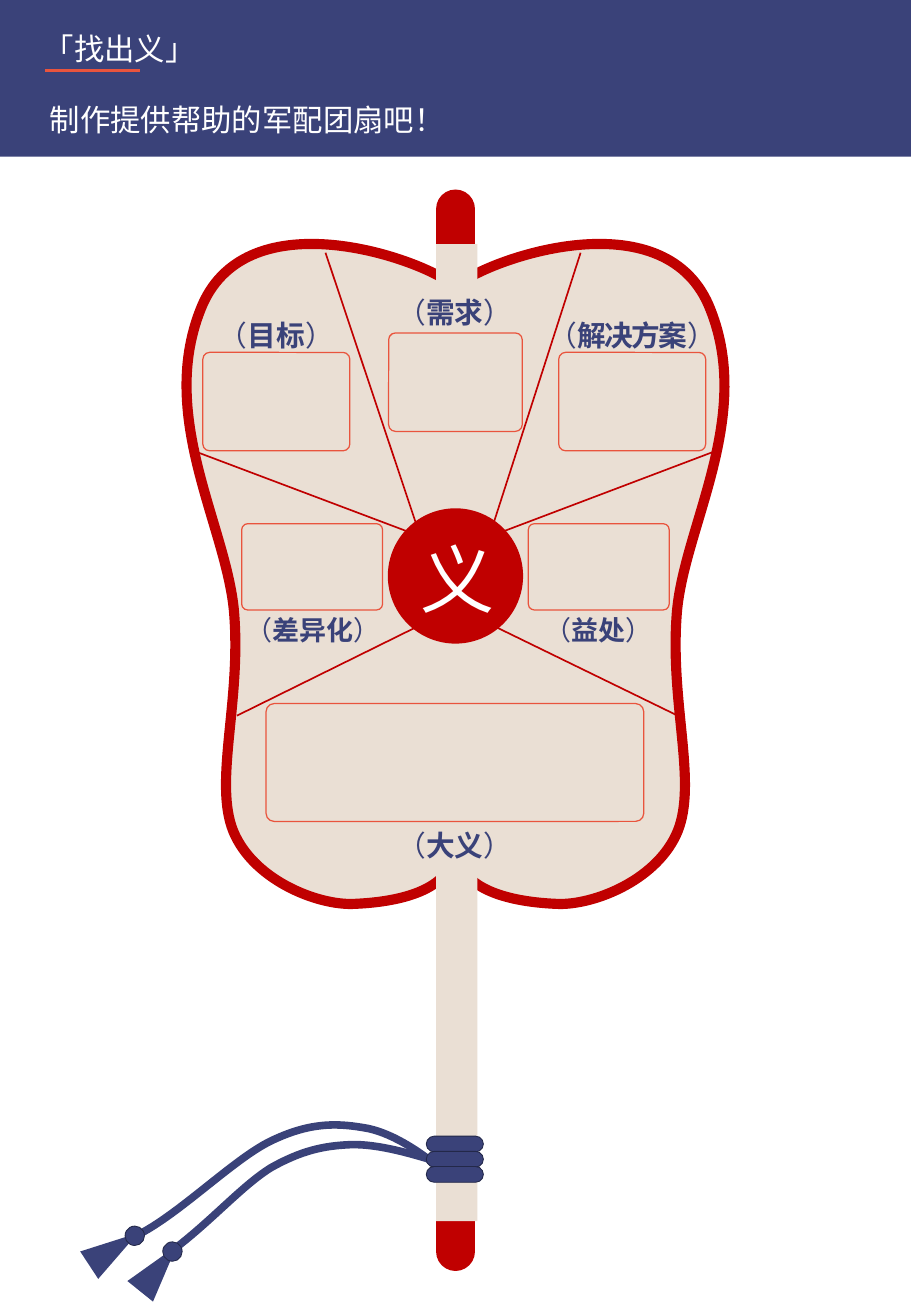
"""Build the war-fan worksheet slide."""
from dataclasses import dataclass

from lxml import etree
from pptx import Presentation
from pptx import util as u
from pptx.dml import color, fill, line
from pptx.enum import shapes, text
from pptx.oxml import ns
from pptx.shapes import autoshape, base
from pptx.slide import Slide
from pptx.text import text as txt

Point = tuple[float, float]
Box = tuple[float, float, float, float]

NAVY, DARK_NAVY, RED, ORANGE = "3A4279", "232849", "C00000", "E9543D"
PAPER, WHITE = "EADFD4", "FFFFFF"
FONT = "Noto Sans CJK SC"
PAGE_WIDTH, PAGE_HEIGHT = 7.5, 10.83
Kind = shapes.MSO_SHAPE


@dataclass(frozen=True)
class Part:
    kind: Kind
    box: Box
    fill: str | None = None
    line: str | None = None
    width: float = 0.5
    radius: float | None = None
    rotation: float = 0


@dataclass(frozen=True)
class Stroke:
    start: Point
    end: Point
    color: str = RED
    width: float = 1


@dataclass(frozen=True)
class Curve:
    box: Box
    knots: list[Point]
    fill: str | None = None
    line: str = NAVY
    width: float = 4.5


@dataclass(frozen=True)
class Label:
    word: str
    box: Box
    size: float = 17
    spacing: float = 1
    side_inset: float = 0.1
    tracking: int = 0


LEFT_BLADE = Curve((1.54, 2.01, 2.21, 5.43), [
    (3.71, 2.33), (3.39, 2.1), (2, 1.64), (1.65, 2.55),
    (1.29, 3.46), (1.89, 4.37), (1.93, 5.08), (1.98, 5.8), (1.76, 6.44), (1.92, 6.84),
    (2.08, 7.23), (2.58, 7.44), (2.89, 7.44), (3.21, 7.43), (3.66, 7.36), (3.73, 7.06),
    (3.8, 6.75), (3.68, 3.09), (3.71, 2.33)], PAPER, RED, 6)
RIGHT_BLADE = Curve((3.75, 2.01, 2.21, 5.43),
                    [(PAGE_WIDTH - x, y) for x, y in LEFT_BLADE.knots], PAPER, RED, 6)
CORDS = [
    Curve((1.12, 9.26, 2.47, 0.92), [
        (3.59, 9.59), (3.46, 9.48), (3.21, 9.31), (2.99, 9.28), (2.76, 9.24),
        (2.54, 9.24), (2.23, 9.39), (1.92, 9.54), (1.47, 10), (1.12, 10.17)]),
    Curve((1.42, 9.42, 2.15, 0.88), [
        (3.57, 9.55), (3.4, 9.5), (3.11, 9.41), (2.88, 9.42), (2.66, 9.43),
        (2.48, 9.47), (2.23, 9.61), (1.99, 9.76), (1.75, 10.04), (1.42, 10.29)]),
]
TASSELS = [Part(Kind.ISOSCELES_TRIANGLE, (x, y, 0.27, 0.48), NAVY, rotation=angle)
           for x, y, angle in [(0.8, 10.04, 56.6), (1.17, 10.2, 38.8)]]
HANDLE = [Part(Kind.ROUNDED_RECTANGLE, (3.59, 1.56, 0.32, 8.9), RED, radius=0.5),
          Part(Kind.RECTANGLE, (3.59, 2.01, 0.34, 8.04), PAPER)]
SPOKES = [Stroke(start, end) for start, end in [
    ((3.75, 5.28), (2.68, 2.08)), ((3.75, 5.28), (4.78, 2.08)),
    ((1.62, 3.72), (4.3, 4.73)), ((1.95, 5.89), (4.3, 4.73)),
    ((3.2, 4.73), (5.87, 3.72)), ((3.2, 4.73), (5.56, 5.88))]]
LABELS = [
    Label("目标", (1.42, 2.57, 1.71, 0.39)),
    Label("需求", (2.95, 2.38, 1.59, 0.39)),
    Label("解决方案", (4.32, 2.57, 1.77, 0.39), side_inset=0, tracking=-90),
    Label("差异化", (1.72, 5.03, 1.71, 0.34), 16, 0.9),
    Label("益处", (4.02, 5.03, 1.81, 0.34), 16, 0.9),
    Label("大义", (2.19, 6.76, 3.11, 0.39)),
]
HUB = Part(Kind.OVAL, (3.2, 4.19, 1.1, 1.1), RED, RED, 1)
BANNER = Part(Kind.RECTANGLE, (0, 0, PAGE_WIDTH, 1.29), NAVY)
TITLE_RULE = Stroke((0.37, 0.58), (1.15, 0.58), ORANGE, 2)
WRAPS = [Part(Kind.ROUNDED_RECTANGLE, (3.51, 9.35 + 0.125 * row, 0.47, 0.13),
              NAVY, DARK_NAVY, radius=0.5) for row in range(3)]
BEADS = [Part(Kind.OVAL, (x, y, 0.16, 0.16), NAVY, DARK_NAVY)
         for x, y in [(1.03, 10.09), (1.34, 10.22)]]
ANSWERS = [Part(Kind.ROUNDED_RECTANGLE, box, None, ORANGE, 0.75, 0.069) for box in [
    (1.67, 2.9, 1.21, 0.81), (4.6, 2.9, 1.21, 0.81), (3.2, 2.74, 1.1, 0.81),
    (1.99, 4.31, 1.16, 0.71), (4.35, 4.31, 1.16, 0.71), (2.19, 5.79, 3.11, 0.97)]]


def inches(values: tuple[float, ...]) -> list[u.Length]:
    return [u.Inches(value) for value in values]


def place(shape: base.BaseShape, box: Box) -> None:
    shape.left, shape.top, shape.width, shape.height = inches(box)


def paint(target: fill.FillFormat, hex_color: str | None) -> None:
    if hex_color is None:
        target.background()
    else:
        target.solid()
        target.fore_color.rgb = color.RGBColor.from_string(hex_color)


def outline(target: line.LineFormat, hex_color: str | None, width: float) -> None:
    paint(target.fill, hex_color)
    if hex_color:
        target.width = u.Pt(width)


def draw_part(slide: Slide, part: Part) -> autoshape.Shape:
    shape = slide.shapes.add_shape(part.kind, *inches(part.box))
    shape.shadow.inherit = False
    shape.rotation = part.rotation
    if part.radius is not None:
        shape.adjustments[0] = part.radius
    paint(shape.fill, part.fill)
    outline(shape.line, part.line, part.width)
    return shape


def draw_stroke(slide: Slide, stroke: Stroke) -> None:
    connector = slide.shapes.add_connector(
        shapes.MSO_CONNECTOR.STRAIGHT, *inches(stroke.start + stroke.end))
    etree.SubElement(connector.element.spPr, ns.qn("a:effectLst"))
    outline(connector.line, stroke.color, stroke.width)


def draw_curve(slide: Slide, curve: Curve) -> None:
    start, *anchors = [inches(knot) for knot in curve.knots[::3]]
    builder = slide.shapes.build_freeform(*start)
    builder.add_line_segments(anchors, close=False)
    shape = builder.convert_to_shape()
    place(shape, curve.box)
    outline_path = next(shape.element.iter(ns.qn("a:path")))
    outline_path.clear()
    outline_path.set("w", str(shape.width))
    outline_path.set("h", str(shape.height))
    for index, knot in enumerate(curve.knots):
        if index % 3 == 1 or index == 0:
            command = "a:cubicBezTo" if index else "a:moveTo"
            segment = etree.SubElement(outline_path, ns.qn(command))
        x, y = inches(knot)
        etree.SubElement(segment, ns.qn("a:pt"), x=str(x - shape.left), y=str(y - shape.top))
    shape.shadow.inherit = False
    paint(shape.fill, curve.fill)
    outline(shape.line, curve.line, curve.width)


def format_run(run: txt._Run, size: float, hex_color: str, bold: bool = False) -> None:
    run.font.size, run.font.bold, run.font.name = u.Pt(size), bold, FONT
    paint(run.font.fill, hex_color)
    etree.SubElement(run.font._element, ns.qn("a:ea"), typeface=FONT)


def set_frame(frame: txt.TextFrame, insets: Box, wrap: bool) -> None:
    frame.margin_left, frame.margin_top, frame.margin_right, frame.margin_bottom = inches(insets)
    frame.word_wrap = wrap
    frame.vertical_anchor = text.MSO_ANCHOR.TOP
    frame.auto_size = text.MSO_AUTO_SIZE.SHAPE_TO_FIT_TEXT


def draw_label(slide: Slide, label: Label) -> None:
    frame = slide.shapes.add_textbox(*inches(label.box)).text_frame
    set_frame(frame, (label.side_inset, 0.05, label.side_inset, 0.05), True)
    paragraph = frame.paragraphs[0]
    paragraph.alignment = text.PP_ALIGN.CENTER
    paragraph.line_spacing = label.spacing
    for piece in ("（", label.word, "）"):
        run = paragraph.add_run()
        run.text = piece
        format_run(run, label.size, NAVY, piece == label.word)
        if label.tracking:
            run.font._element.set("spc", str(label.tracking))


def write_heading(heading: base.BaseShape, words: str, box: Box) -> None:
    place(heading, box)
    heading.text_frame.text = words
    set_frame(heading.text_frame, (0.02,) * 4, False)
    paragraph = heading.text_frame.paragraphs[0]
    paragraph.alignment = text.PP_ALIGN.LEFT
    paragraph.line_spacing = 1.5
    format_run(paragraph.runs[0], 18, WHITE)


def draw_hub(slide: Slide) -> None:
    frame = draw_part(slide, HUB).text_frame
    frame.text = "义"
    frame.margin_top = u.Inches(0.08)
    frame.vertical_anchor = text.MSO_ANCHOR.MIDDLE
    frame.paragraphs[0].alignment = text.PP_ALIGN.CENTER
    format_run(frame.paragraphs[0].runs[0], 44, WHITE)


def main() -> None:
    deck = Presentation()
    deck.slide_width, deck.slide_height = inches((PAGE_WIDTH, PAGE_HEIGHT))
    slide = deck.slides.add_slide(deck.slide_layouts[5])
    for tassel in TASSELS:
        draw_part(slide, tassel)
    for curve in CORDS + [LEFT_BLADE, RIGHT_BLADE]:
        draw_curve(slide, curve)
    for part in HANDLE:
        draw_part(slide, part)
    for spoke in SPOKES:
        draw_stroke(slide, spoke)
    for label in LABELS:
        draw_label(slide, label)
    draw_hub(slide)
    draw_part(slide, BANNER)
    title = slide.shapes.title
    title.element.getparent().append(title.element)
    write_heading(title, "「找出义」", (0.34, 0.08, 1.31, 0.45))
    draw_stroke(slide, TITLE_RULE)
    subtitle = slide.shapes.add_textbox(0, 0, 0, 0)
    write_heading(subtitle, "制作提供帮助的军配团扇吧！", (0.39, 0.66, 3.33, 0.45))
    for part in WRAPS + BEADS + ANSWERS:
        draw_part(slide, part)
    deck.save("out.pptx")


if __name__ == "__main__":
    main()
